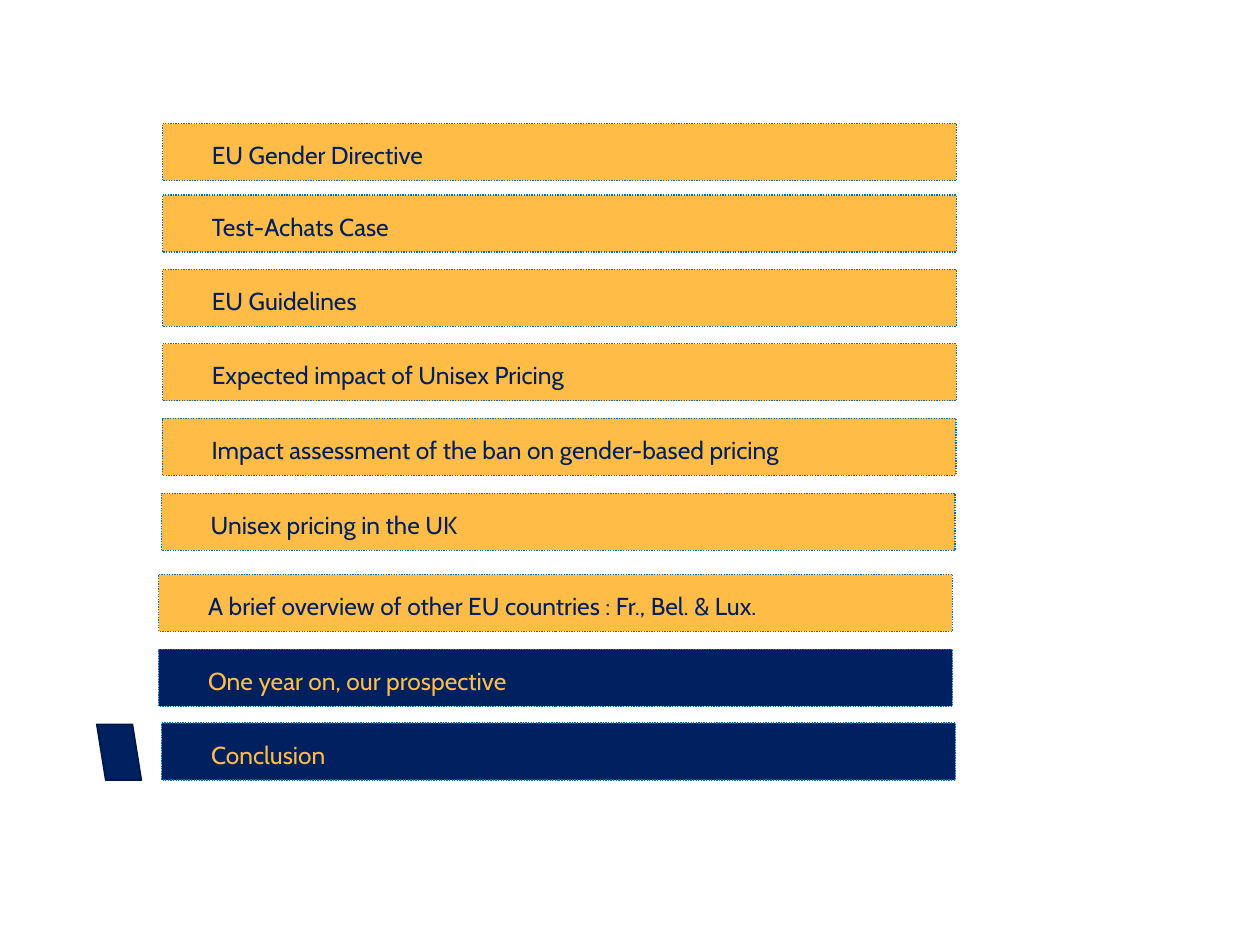
from pptx import Presentation
from pptx.dml.color import RGBColor
from pptx.enum import dml, shapes, text
from pptx.util import Pt

NAVY = RGBColor(0x00, 0x20, 0x60)
DARK_NAVY = RGBColor(0x00, 0x18, 0x47)
AMBER = RGBColor(0xFF, 0xBD, 0x47)
BLUE = RGBColor(0x00, 0x70, 0xC0)

# Agenda: wording, left and top
COVERED = [
    ("EU Gender Directive", 92.9, 70.6),
    ("Test-Achats Case", 92.9, 111.4),
    ("EU Guidelines", 92.9, 154),
    ("Expected impact of Unisex Pricing", 92.9, 196.5),
    ("Impact assessment of the ban on gender-based pricing", 92.7, 239),
    ("Unisex pricing in the UK", 92.2, 282),
    ("A brief overview of other EU countries : Fr., Bel. & Lux.", 90.7, 328.2),
]
REMAINING = [
    ("One year on, our prospective", 90.7, 371),
    ("Conclusion", 92.4, 413.2),
]
BAR_WIDTH, BAR_HEIGHT = 453.6, 32.6
MARKER_BOX = (55.4, 414, 25.4, 31.8)

FRAME_FORMAT = {
    "margin_left": Pt(28.2), "margin_top": Pt(0),
    "margin_right": Pt(7.2), "margin_bottom": Pt(3.6),
    "vertical_anchor": text.MSO_ANCHOR.MIDDLE, "word_wrap": True,
}
PARAGRAPH_FORMAT = {"alignment": text.PP_ALIGN.LEFT, "line_spacing": 1.4}
FONT_FORMAT = {"name": "Cabin", "size": Pt(14)}


def apply(target, values):
    for name, value in values.items():
        setattr(target, name, value)


def add_block(slide, preset, box, fill, line, line_width):
    block = slide.shapes.add_shape(preset, *map(Pt, box))
    block.shadow.inherit = False
    block.fill.solid()
    block.fill.fore_color.rgb = fill
    block.line.color.rgb = line
    block.line.width = Pt(line_width)
    return block


def add_bar(slide, item, fill, ink):
    wording, left, top = item
    bar = add_block(slide, shapes.MSO_SHAPE.RECTANGLE,
                    (left, top, BAR_WIDTH, BAR_HEIGHT), fill, BLUE, 0.75)
    bar.line.dash_style = dml.MSO_LINE.ROUND_DOT
    apply(bar.text_frame, FRAME_FORMAT)
    entry = bar.text_frame.paragraphs[0]
    apply(entry, PARAGRAPH_FORMAT)
    run = entry.add_run()
    run.text = wording
    apply(run.font, FONT_FORMAT)
    run.font.color.rgb = ink


def main():
    deck = Presentation()
    deck.slide_width, deck.slide_height = Pt(720), Pt(540)
    slide = deck.slides.add_slide(deck.slide_layouts[6])

    # Agenda bars
    for items, fill, ink in ((COVERED, AMBER, NAVY), (REMAINING, NAVY, AMBER)):
        for item in items:
            add_bar(slide, item, fill, ink)

    # Marker beside the current item, mirrored to lean left
    marker = add_block(slide, shapes.MSO_SHAPE.FLOWCHART_DATA, MARKER_BOX,
                       NAVY, DARK_NAVY, 1)
    marker._element.spPr.xfrm.set("flipH", "1")

    deck.save("out.pptx")


if __name__ == "__main__":
    main()
